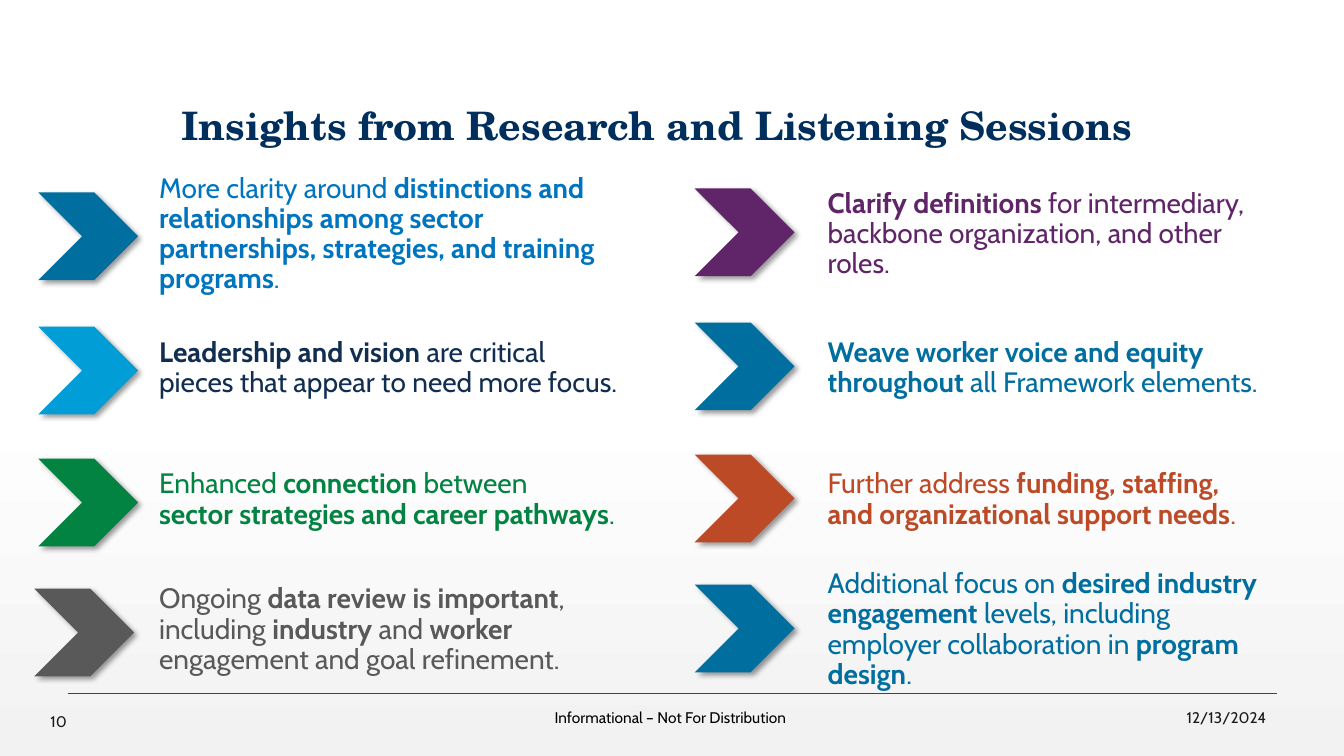
"""Build the slide of insights from research and listening sessions."""
from lxml.etree import SubElement
from pptx import Presentation
from pptx.dml.color import RGBColor
from pptx.enum.shapes import MSO_CONNECTOR, MSO_SHAPE
from pptx.enum.text import MSO_ANCHOR, PP_ALIGN
from pptx.oxml import parse_xml
from pptx.oxml.ns import nsdecls, qn
from pptx.util import Inches, Pt


def color(value):
    return RGBColor.from_string(value)


def add_text(area, lines, style, align=PP_ALIGN.LEFT, anchor=MSO_ANCHOR.TOP,
             insets=(0.1, 0.05, 0.1, 0.05), indent=0, spacing=1.0):
    """Add a text box in which asterisks enclose bold words."""
    box = page.shapes.add_textbox(*[Inches(length) for length in area])
    frame = box.text_frame
    frame.word_wrap = True
    frame.vertical_anchor = anchor
    for side, inset in zip(("left", "top", "right", "bottom"), insets):
        setattr(frame, f"margin_{side}", Inches(inset))
    size, typeface, ink = style
    for number, line in enumerate(lines):
        para = frame.add_paragraph() if number else frame.paragraphs[0]
        para.alignment = align
        para.line_spacing = spacing
        para._p.get_or_add_pPr().set("marL", str(Inches(indent)))
        for position, words in enumerate(line.split("*")):
            if words:
                span = para.add_run()
                span.text = words
                look = {"size": Pt(size), "name": typeface, "bold": position % 2 == 1}
                for key, value in look.items():
                    setattr(span.font, key, value)
                span.font.color.rgb = color(ink)


deck = Presentation()
deck.slide_width, deck.slide_height = Inches(13.33), Inches(7.5)
page = deck.slides.add_slide(deck.slide_layouts[6])

page.background.fill.gradient()
gradient = page.background._cSld.find(".//" + qn("a:gradFill"))
gradient.getparent().replace(gradient, parse_xml(
    f'<a:gradFill {nsdecls("a")} rotWithShape="1"><a:gsLst>'
    '<a:gs pos="0"><a:srgbClr val="FFFFFF"/></a:gs>'
    '<a:gs pos="53000"><a:srgbClr val="FFFFFF"/></a:gs>'
    '<a:gs pos="100000"><a:srgbClr val="F2F2F2"><a:alpha val="65000"/></a:srgbClr></a:gs>'
    '</a:gsLst><a:lin ang="5400000" scaled="0"/></a:gradFill>'))

rule = page.shapes.add_connector(
    MSO_CONNECTOR.STRAIGHT, Inches(0.67), Inches(6.88), Inches(12.67), Inches(6.88))
rule.line.color.rgb = color("00588F")
rule.line.width = Pt(1)
SubElement(rule._element.spPr, qn("a:effectLst"))

left_insights = [
    ("0075BF", "006E9F", 0.38, [
        "More clarity around *distinctions and*",
        "*relationships among sector partnerships, strategies, and training programs*."]),
    ("112E51", "009DD7", 0.38, [
        "*Leadership and vision* are critical",
        "pieces that appear to need more focus."]),
    ("028342", "028342", 0.38, [
        "Enhanced *connection *between",
        "*sector strategies and career pathways*."]),
    ("595959", "595959", 0.34, [
        "Ongoing *data review is important*, including *industry* and *worker*"
        " engagement and goal refinement."]),
]
right_insights = [
    ("602468", "602468", 6.89, [
        "*Clarify definitions* for intermediary, backbone organization, and other roles."]),
    ("006E9F", "006E9F", 6.89, [
        "*Weave worker voice and equity*",
        "*throughout* all Framework elements."]),
    ("BC4A26", "BC4A26", 6.89, [
        "Further address *funding, staffing,*",
        "*and organizational support needs*."]),
    ("006E9F", "006E9F", 6.89, [
        "Additional focus on *desired industry engagement* levels, including"
        " employer collaboration in *program design*."]),
]
rows = [(1.77, 1.11, 1.91), (3.1, 1.11, 3.24), (4.42, 1.08, 4.55), (5.71, 1.08, 5.84)]
columns = [(0.11, 1.37, 0, left_insights), (6.67, 1.44, 0.04, right_insights)]

for left, indent, lift, insights in columns:
    for (top, height, arrow_top), (ink, fill, arrow_left, lines) in zip(rows, insights):
        add_text((left, top, 6.41, height), lines, (20, "Cabin", ink),
                 anchor=MSO_ANCHOR.MIDDLE, insets=(0.1, 0.07, 0.3, 0.07),
                 indent=indent, spacing=0.9)
        chevron = page.shapes.add_shape(
            MSO_SHAPE.CHEVRON, Inches(arrow_left), Inches(arrow_top - lift),
            Inches(0.99), Inches(0.87))
        chevron.fill.solid()
        chevron.fill.fore_color.rgb = color(fill)
        chevron.line.fill.background()
        chevron.shadow.inherit = False
        effects = chevron._element.spPr.find(qn("a:effectLst"))
        effects.append(parse_xml(
            f'<a:outerShdw {nsdecls("a")} blurRad="{Pt(4)}" dist="{Pt(3)}" dir="2700000"'
            ' algn="tl" rotWithShape="0"><a:srgbClr val="000000"><a:alpha val="40000"/>'
            '</a:srgbClr></a:outerShdw>'))

add_text((0.34, 0.73, 12.35, 0.8), ["*Insights from Research and Listening Sessions*"],
         (28, "TeX Gyre Schola", "002F5D"), PP_ALIGN.CENTER, MSO_ANCHOR.BOTTOM, spacing=0.9)
add_text((0.5, 7.02, 0.42, 0.27), ["10"], (11, "Cabin", "1A1A1A"),
         anchor=MSO_ANCHOR.MIDDLE, insets=(0, 0.05, 0.1, 0.05))
add_text((1.9, 6.98, 9.5, 0.24), ["Informational – Not For Distribution"],
         (11, "Cabin", "000000"), PP_ALIGN.CENTER)
add_text((11.6, 6.98, 1.06, 0.24), ["12/13/2024"], (11, "Cabin", "1A1A1A"), PP_ALIGN.RIGHT)

deck.save("out.pptx")
